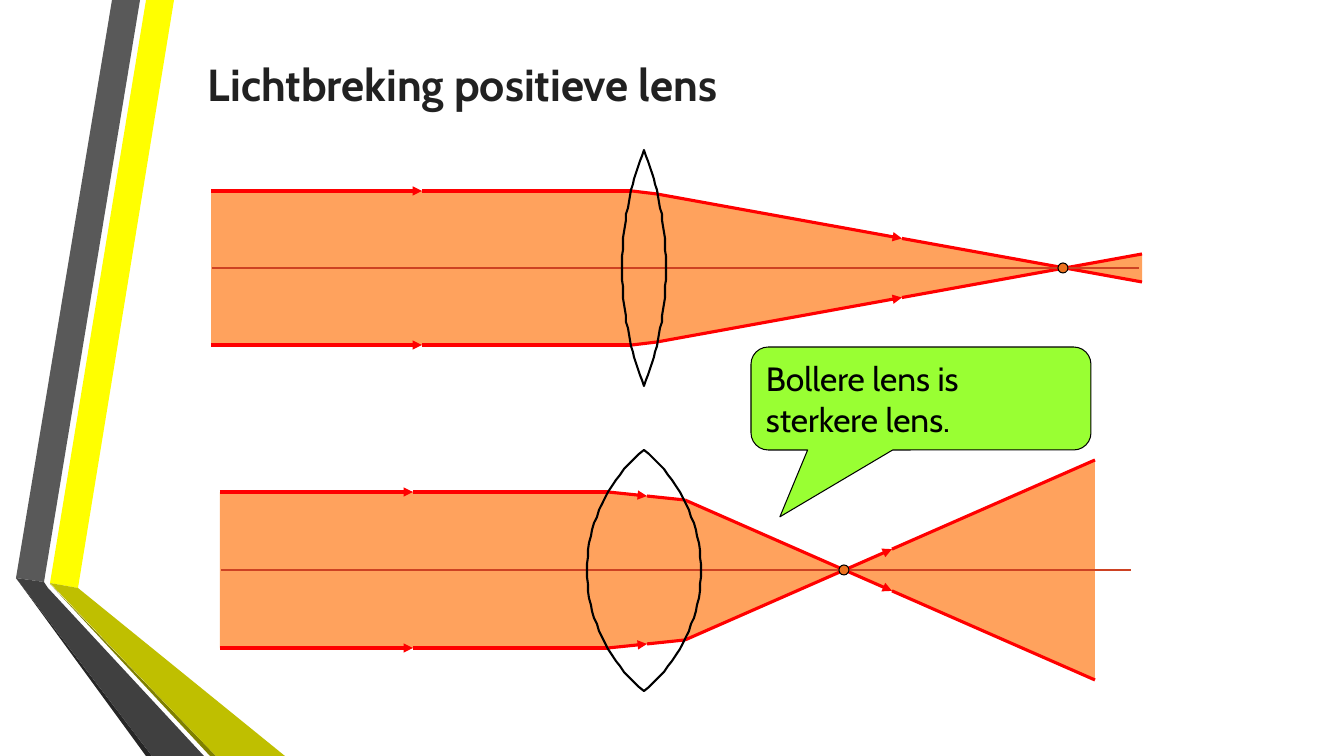
import math

import pptx
import pptx.dml.color
import pptx.enum.shapes
import pptx.enum.text
import pptx.oxml
import pptx.oxml.ns
import pptx.util

EMU_PER_PX = 914400 / 100.8
FONT = "Cabin"
COLORS = {
    "grey": "595959", "grey_dark": "404040", "grey_edge": "262626",
    "yellow": "FFFF00", "yellow_dark": "BFBF00", "yellow_edge": "7F8000",
    "beam": "FFA25D", "ray": "FF0000", "axis": "CD4223", "focus": "EC7220",
    "callout": "99FF33", "black": "000000", "title": "212121",
}
RIBBONS = [
    ("yellow", [(50, 583), (78, 588), (174, 0), (146, 0)]),
    ("grey", [(140, 0), (112, 0), (16, 578), (44, 582)]),
    ("grey_edge", [(16, 578), (146, 756), (152, 756)]),
    ("yellow_edge", [(50, 584), (210, 756), (216, 756)]),
    ("yellow_dark", [(50, 583), (216, 756), (285, 756), (78, 588)]),
    ("grey_dark", [(16, 578), (152, 756), (204, 756), (48, 588), (44, 582)]),
]
LENS_X = 644


def px(value):
    return pptx.util.Emu(round(value * EMU_PER_PX))


def rgb(name):
    return pptx.dml.color.RGBColor.from_string(COLORS[name])


def style(shape, fill=None, line=None, width=0.75):
    shape.shadow.inherit = False
    if fill:
        shape.fill.solid()
        shape.fill.fore_color.rgb = rgb(fill)
    else:
        shape.fill.background()
    if line:
        shape.line.color.rgb = rgb(line)
        shape.line.width = pptx.util.Pt(width)
    else:
        shape.line.fill.background()


def add_polygon(slide, points, **look):
    builder = slide.shapes.build_freeform(*points[0], scale=EMU_PER_PX)
    builder.add_line_segments(points[1:], close=True)
    style(builder.convert_to_shape(), **look)


def add_line(slide, start, end, color, width, arrow=False):
    line = slide.shapes.add_connector(
        pptx.enum.shapes.MSO_CONNECTOR.STRAIGHT,
        px(start[0]), px(start[1]), px(end[0]), px(end[1]))
    line.line.color.rgb = rgb(color)
    line.line.width = pptx.util.Pt(width)
    if arrow:
        tail = pptx.oxml.parse_xml(
            f'<a:tailEnd {pptx.oxml.ns.nsdecls("a")} type="triangle"/>')
        line.line._get_or_add_ln().append(tail)
    line._element.spPr.append(
        pptx.oxml.parse_xml(f'<a:effectLst {pptx.oxml.ns.nsdecls("a")}/>'))


def add_ray(slide, start, end, arrow_x):
    """Draw a ray segment, with an arrowhead at arrow_x unless it is None."""
    if arrow_x is not None:
        share = (arrow_x - start[0]) / (end[0] - start[0])
        middle = (arrow_x, start[1] + share * (end[1] - start[1]))
        add_line(slide, start, middle, "ray", 2.25, arrow=True)
        start = middle
    add_line(slide, start, end, "ray", 2.25)


def add_lens(slide, top, bottom, bulge):
    """Outline a lens between two circular arcs that meet at its tips."""
    half = (bottom - top) / 2
    radius = (half ** 2 + bulge ** 2) / (2 * bulge)
    limit = math.asin(half / radius)
    steps = 40
    arc = []
    for step in range(steps + 1):
        angle = limit * (2 * step / steps - 1)
        arc.append((radius * math.cos(angle) - radius + bulge,
                    (top + bottom) / 2 + radius * math.sin(angle)))
    right = [(LENS_X + x, y) for x, y in arc]
    left = [(LENS_X - x, y) for x, y in reversed(arc[1:-1])]
    add_polygon(slide, right + left, line="black", width=1.5)


def add_focus(slide, x, y):
    dot = slide.shapes.add_shape(
        pptx.enum.shapes.MSO_SHAPE.OVAL, px(x - 5), px(y - 5), px(10), px(10))
    style(dot, fill="focus", line="black")


def add_refraction(slide, axis, axis_ends, path, arrows, focus_x, lens):
    """Draw a beam symmetric about the axis; path holds (x, distance to axis)."""
    end_x, end_offset = path[-1]
    upper = [(x, axis - offset) for x, offset in path]
    lower = [(x, axis + offset) for x, offset in path]
    focus = (focus_x, axis)
    add_polygon(slide, [focus, upper[-1], lower[-1]], fill="beam")
    add_polygon(slide, upper[:-1] + [focus] + lower[-2::-1], fill="beam")
    for points in (upper, lower):
        for start, end, arrow_x in zip(points, points[1:], arrows):
            add_ray(slide, start, end, arrow_x)
    add_line(slide, (axis_ends[0], axis), (axis_ends[1], axis), "axis", 1.5)
    add_lens(slide, *lens)
    add_focus(slide, *focus)


def write(shape, text, size, color, bold=False):
    shape.text_frame.word_wrap = True
    shape.text_frame.vertical_anchor = pptx.enum.text.MSO_ANCHOR.MIDDLE
    paragraph = shape.text_frame.paragraphs[0]
    paragraph.alignment = pptx.enum.text.PP_ALIGN.LEFT
    run = paragraph.add_run()
    run.text = text
    run.font.name = FONT
    run.font.size = pptx.util.Pt(size)
    run.font.bold = bold
    run.font.color.rgb = rgb(color)


def add_callout(slide, text):
    callout = slide.shapes.add_shape(
        pptx.enum.shapes.MSO_SHAPE.ROUNDED_RECTANGULAR_CALLOUT,
        px(751), px(347), px(340), px(103))
    for index, value in enumerate((-0.415, 1.149, 0.167)):
        callout.adjustments[index] = value
    style(callout, fill="callout", line="black")
    write(callout, text, 24, "black")


def add_title(slide, text):
    title = slide.shapes.add_textbox(px(198), px(21), px(907), px(126))
    write(title, text, 32, "title", bold=True)


def main():
    presentation = pptx.Presentation()
    presentation.slide_width = px(1344)
    presentation.slide_height = px(756)
    slide = presentation.slides.add_slide(presentation.slide_layouts[6])
    for color, points in RIBBONS:
        add_polygon(slide, points, fill=color)
    add_refraction(
        slide, axis=268, axis_ends=(212, 1139),
        path=[(211, 77), (632, 77), (657, 74), (1142, -14)],
        arrows=[422, None, 902], focus_x=1063, lens=(150, 386, 22))
    add_refraction(
        slide, axis=570, axis_ends=(221, 1131),
        path=[(220, 78), (608, 78), (685, 70), (1095, -110)],
        arrows=[413, 647, 892], focus_x=844, lens=(450, 691, 57))
    add_callout(slide, "Bollere lens is sterkere lens.")
    add_title(slide, "Lichtbreking positieve lens")
    presentation.save("out.pptx")


if __name__ == "__main__":
    main()
